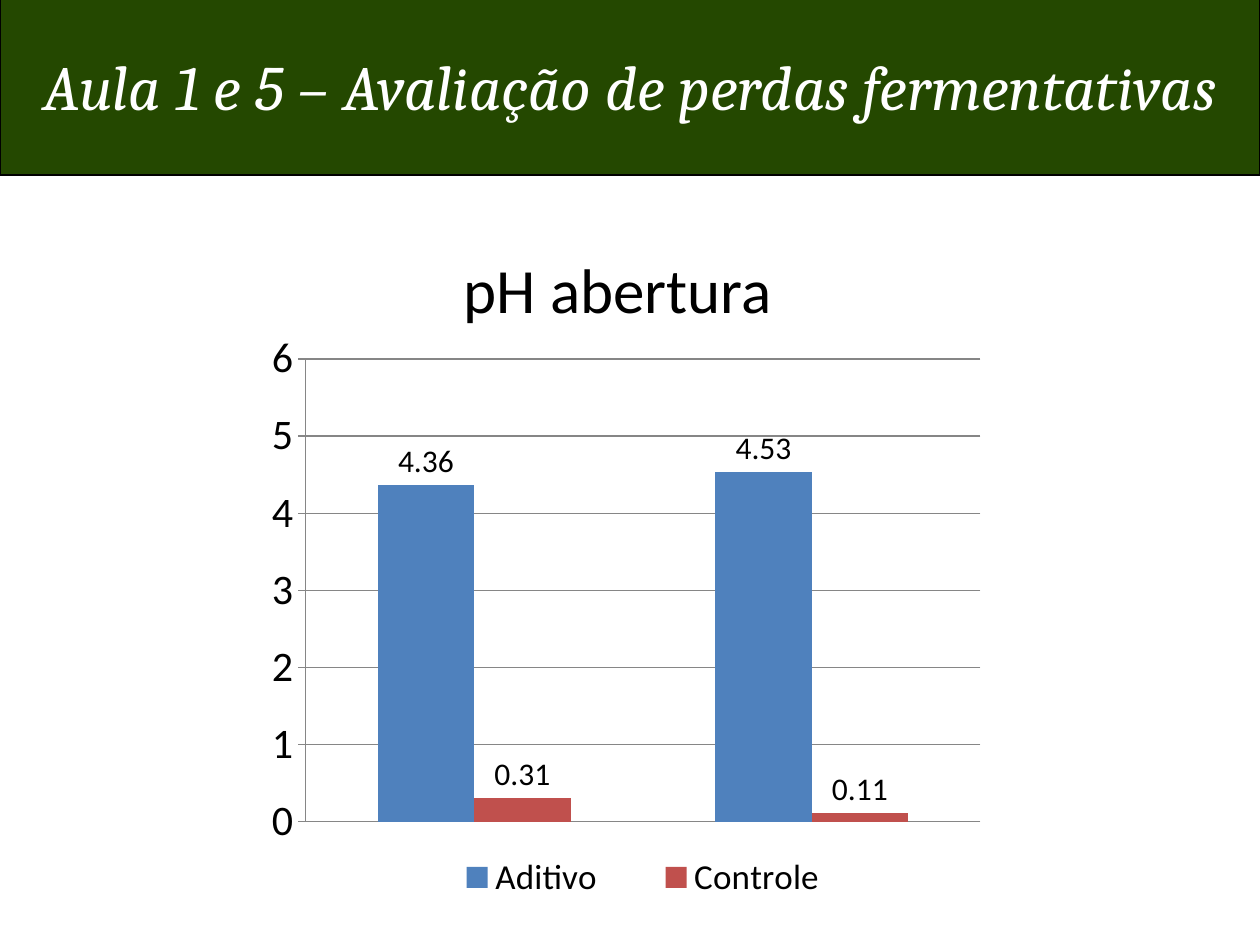
import lxml.etree
import pptx
import pptx.chart.data
import pptx.dml.color
import pptx.enum.chart
import pptx.enum.text
import pptx.oxml.ns
import pptx.util
from pptx.util import Cm, Pt

TITLE = "Aula 1 e 5 – Avaliação de perdas fermentativas"
CHART_TITLE = "pH abertura"
CATEGORIES = ["1", "2"]
SERIES = [
    ("Aditivo", (4.36, 4.53), "blue"),
    ("Controle", (0.31, 0.11), "red"),
]
COLOURS = {
    "band": "244800",
    "white": "FFFFFF",
    "black": "000000",
    "grid": "868686",
    "blue": "4F81BD",
    "red": "C0504D",
}
# Fractions of the chart area: left, top, width, height
PLOT_AREA = (0.09, 0.06, 0.84, 0.79)
LEGEND_AREA = (0.22, 0.9, 0.58, 0.09)


def colour(name):
    return pptx.dml.color.RGBColor.from_string(COLOURS[name])


def format_font(font, size, name="Calibri", colour_name="black"):
    font.name = name
    font.size = Pt(size)
    font.color.rgb = colour(colour_name)


def set_layout(element, position, area, inner=False):
    """Give a chart part a manual layout as its child at the given position."""
    tag = pptx.oxml.ns.qn
    for old_layout in element.findall(tag("c:layout")):
        element.remove(old_layout)
    layout = lxml.etree.Element(tag("c:layout"))
    manual = lxml.etree.SubElement(layout, tag("c:manualLayout"))
    settings = [("layoutTarget", "inner")] if inner else []
    settings += [("xMode", "edge"), ("yMode", "edge")]
    settings += zip("xywh", area)
    for name, value in settings:
        lxml.etree.SubElement(manual, tag("c:" + name)).set("val", str(value))
    element.insert(position, layout)


def format_title(title):
    title.left, title.top = Cm(0), Cm(-0.08)
    title.width, title.height = Cm(25.4), Cm(3.61)
    title.fill.solid()
    title.fill.fore_color.rgb = colour("band")
    title.line.color.rgb = colour("black")
    title.line.width = Pt(0.75)
    frame = title.text_frame
    frame.text = TITLE
    frame.word_wrap = False
    frame.vertical_anchor = pptx.enum.text.MSO_ANCHOR.MIDDLE
    paragraph = frame.paragraphs[0]
    paragraph.alignment = pptx.enum.text.PP_ALIGN.CENTER
    font = paragraph.runs[0].font
    format_font(font, 36, "Cambria", "white")
    font.italic = True


def add_ph_chart(slide):
    data = pptx.chart.data.CategoryChartData(number_format="0.00")
    data.categories = CATEGORIES
    for name, values, _ in SERIES:
        data.add_series(name, values)
    chart = slide.shapes.add_chart(
        pptx.enum.chart.XL_CHART_TYPE.COLUMN_CLUSTERED,
        Cm(4.7), Cm(6.53), Cm(16.2), Cm(11.81), data,
    ).chart
    chart.has_title = False
    format_font(chart.font, 10)

    plot = chart.plots[0]
    plot.gap_width = 150
    plot.overlap = 0
    plot.vary_by_categories = False
    for series, (_, _, fill_name) in zip(plot.series, SERIES):
        series.format.fill.solid()
        series.format.fill.fore_color.rgb = colour(fill_name)
        labels = series.data_labels
        labels.show_value = True
        labels.number_format = "0.00"
        labels.number_format_is_linked = False
        labels.position = pptx.enum.chart.XL_LABEL_POSITION.OUTSIDE_END
        format_font(labels.font, 18)

    chart.category_axis.visible = False
    axis = chart.value_axis
    axis.minimum_scale, axis.maximum_scale, axis.major_unit = 0, 6, 1
    axis.major_tick_mark = pptx.enum.chart.XL_TICK_MARK.CROSS
    axis.tick_labels.number_format = "0"
    axis.tick_labels.number_format_is_linked = False
    format_font(axis.tick_labels.font, 24)
    axis.has_major_gridlines = True
    for line in (axis.format.line, axis.major_gridlines.format.line):
        line.color.rgb = colour("grid")
        line.width = Pt(0.75)

    chart.has_legend = True
    legend = chart.legend
    legend.position = pptx.enum.chart.XL_LEGEND_POSITION.RIGHT
    legend.include_in_layout = False
    format_font(legend.font, 20)
    plot_area = chart.element.find(".//" + pptx.oxml.ns.qn("c:plotArea"))
    set_layout(plot_area, 0, PLOT_AREA, inner=True)
    set_layout(legend.element if hasattr(legend, "element") else chart.element.find(
        ".//" + pptx.oxml.ns.qn("c:legend")), 1, LEGEND_AREA)


def add_chart_title(slide):
    box = slide.shapes.add_textbox(Cm(9.1), Cm(4.93), Cm(7.2), Cm(1.8))
    frame = box.text_frame
    frame.word_wrap = True
    frame.auto_size = pptx.enum.text.MSO_AUTO_SIZE.SHAPE_TO_FIT_TEXT
    frame.text = CHART_TITLE
    format_font(frame.paragraphs[0].runs[0].font, 36)


def main():
    presentation = pptx.Presentation()
    presentation.slide_width, presentation.slide_height = Cm(25.4), Cm(19.05)
    slide = presentation.slides.add_slide(presentation.slide_layouts[5])
    format_title(slide.shapes.title)
    add_ph_chart(slide)
    add_chart_title(slide)
    presentation.save("out.pptx")


if __name__ == "__main__":
    main()
